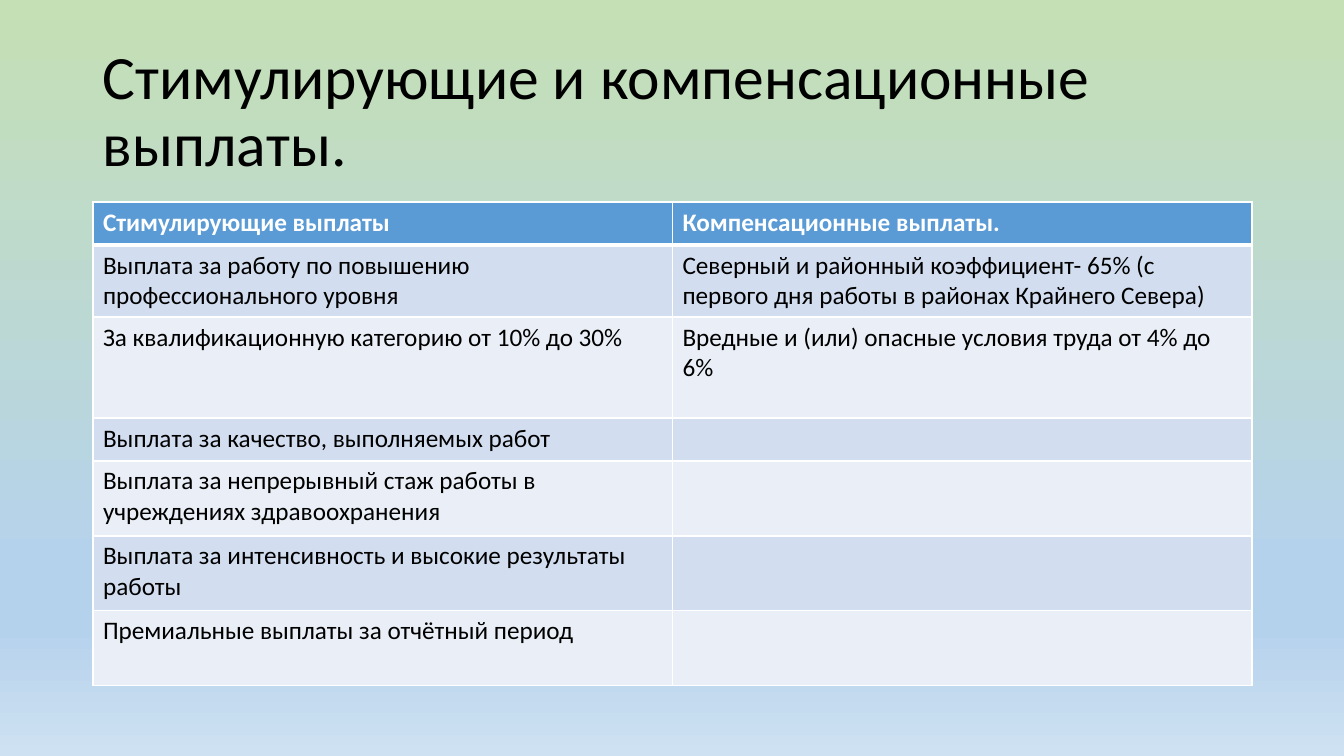
from copy import deepcopy
from dataclasses import dataclass

from lxml.etree import SubElement
from pptx import Presentation
from pptx.dml.color import RGBColor
from pptx.enum.text import MSO_ANCHOR
from pptx.oxml.ns import qn
from pptx.util import Pt

PX = 914400 / 100.8


@dataclass(frozen=True)
class Theme:
    """Colours, font and type sizes of the slide."""
    font: str = "Calibri"
    title_size: int = 44
    table_size: int = 18
    ink: str = "000000"
    light: str = "FFFFFF"
    header: str = "5B9BD5"
    bands: tuple = ("D2DEEF", "EAEFF7")
    backdrop: tuple = ((0, "C5E0B4"), (0.74, "B5D2EC"), (0.83, "B5D2EC"), (1, "CEE1F2"))


THEME = Theme()
TITLE = "Стимулирующие и компенсационные выплаты."
PAYMENTS = (
    (43, "Стимулирующие выплаты", "Компенсационные выплаты."),
    (72, "Выплата за работу по повышению профессионального уровня",
     "Северный и районный коэффициент- 65% (с первого дня работы в районах Крайнего Севера)"),
    (101, "За квалификационную категорию от 10% до 30%",
     "Вредные и (или) опасные условия труда от 4% до 6%"),
    (43, "Выплата за качество, выполняемых работ", ""),
    (75, "Выплата за непрерывный стаж работы в учреждениях здравоохранения", ""),
    (75, "Выплата за интенсивность и высокие результаты работы", ""),
    (75, "Премиальные выплаты за отчётный период", ""),
)


def px(n):
    """Turn px into EMU."""
    return round(n * PX)


def set_font(p, size, color, bold=False):
    """Style a whole paragraph."""
    p.font.name = THEME.font
    p.font.size = Pt(size)
    p.font.bold = bold
    p.font.color.rgb = RGBColor.from_string(color)


def set_borders(cell, bottom):
    """Draw light borders around a cell, with its own bottom width."""
    tc_pr = cell._tc.get_or_add_tcPr()
    for i, (side, width) in enumerate((("L", 1), ("R", 1), ("T", 1), ("B", bottom))):
        ln = tc_pr.makeelement(qn(f"a:ln{side}"), {"w": str(Pt(width))})
        SubElement(SubElement(ln, qn("a:solidFill")), qn("a:srgbClr"), val=THEME.light)
        tc_pr.insert(i, ln)


def paint_background(s):
    """Fill the slide with a vertical gradient."""
    fill = s.background.fill
    fill.gradient()
    fill.gradient_angle = 270
    stops = s.element.xpath(".//a:gsLst")[0]
    while len(stops) < len(THEME.backdrop):
        stops.append(deepcopy(stops[0]))
    for stop, (position, color) in zip(fill.gradient_stops, THEME.backdrop):
        stop.position = position
        stop.color.rgb = RGBColor.from_string(color)


def add_title(s, x, y, w, h):
    """Place the title in its box."""
    tf = s.shapes.add_textbox(px(x), px(y), px(w), px(h)).text_frame
    tf.word_wrap = True
    tf.vertical_anchor = MSO_ANCHOR.MIDDLE
    p = tf.paragraphs[0]
    p.text = TITLE
    p.line_spacing = 0.9
    set_font(p, THEME.title_size, THEME.ink)


def add_payments(s, x, y, w):
    """Place the payments table, with two equal columns."""
    h = sum(height for height, *_ in PAYMENTS)
    table = s.shapes.add_table(len(PAYMENTS), 2, px(x), px(y), px(w), px(h)).table
    for i, (height, *texts) in enumerate(PAYMENTS):
        head = i == 0
        table.rows[i].height = px(height)
        for cell, text in zip(table.rows[i].cells, texts):
            cell.fill.solid()
            cell.fill.fore_color.rgb = RGBColor.from_string(
                THEME.header if head else THEME.bands[(i - 1) % 2])
            set_borders(cell, 3 if head else 1)
            p = cell.text_frame.paragraphs[0]
            p.text = text
            set_font(p, THEME.table_size, THEME.light if head else THEME.ink, head)


def main():
    """Build and save the slide."""
    prs = Presentation()
    prs.slide_width, prs.slide_height = px(1344), px(756)
    s = prs.slides.add_slide(prs.slide_layouts[6])
    paint_background(s)
    add_title(s, 93, 40, 1159, 146)
    add_payments(s, 93, 202, 1159)
    prs.save("out.pptx")


if __name__ == "__main__":
    main()
